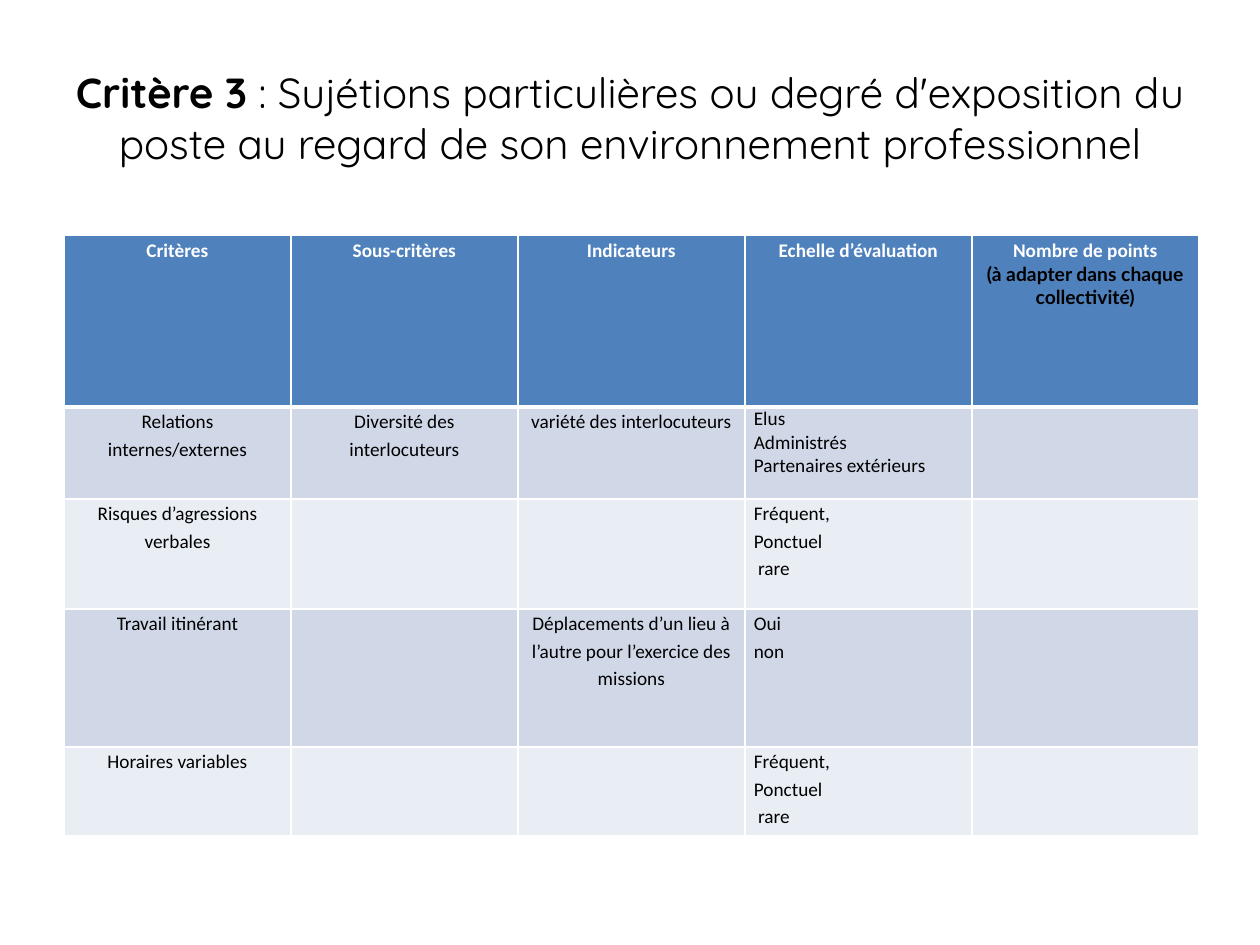
from lxml import etree
from pptx import Presentation, util as u
from pptx.dml.color import RGBColor
from pptx.enum import text
from pptx.oxml.ns import qn

PX = 914400 // 126
COLORS = {"header": "4F81BD", "odd": "D0D8E8", "even": "E9EDF4",
          "white": "FFFFFF", "black": "000000"}

TITLE = [("Critère 3", True),
         (" : Sujétions particulières ou degré d'exposition du poste "
          "au regard de son environnement professionnel", False)]
HEADERS = ["Critères", "Sous-critères", "Indicateurs", "Echelle d’évaluation",
           "Nombre de points"]
HEADER_NOTE = "(à adapter dans chaque collectivité)"
FREQUENCY = ["Fréquent,", "Ponctuel", " rare"]
# criterion, sub-criterion, indicator, scale, line spacing of the scale
CRITERIA = [
    ("Relations internes/externes", "Diversité des interlocuteurs",
     "variété des interlocuteurs", ["Elus", "Administrés", "Partenaires extérieurs"], 1.0),
    ("Risques d’agressions verbales", "", "", FREQUENCY, 1.15),
    ("Travail itinérant", "",
     "Déplacements d’un lieu à l’autre pour l’exercice des missions", ["Oui", "non"], 1.15),
    ("Horaires variables", "", "", FREQUENCY, 1.15),
]
TITLE_BOX = (63, 38, 1134, 158)
TABLE_LEFT, TABLE_TOP = 64, 235
COLUMN_WIDTH = 227
ROW_HEIGHTS = [172, 92, 110, 138, 89]


def px(value):
    return u.Emu(value * PX)


def rgb(name):
    return RGBColor.from_string(COLORS[name])


def add_text(frame, runs, size=11, font="Calibri", color="black", align="CENTER", spacing=1.15):
    """Write (words, bold) runs as one paragraph, reusing an empty first one."""
    para = frame.paragraphs[-1]
    if para.runs:
        para = frame.add_paragraph()
    para.alignment = getattr(text.PP_ALIGN, align)
    para.line_spacing = spacing
    for words, bold in runs:
        span = para.add_run()
        span.text = words
        span.font.size = u.Pt(size)
        span.font.name = font
        span.font.bold = bold
        span.font.color.rgb = rgb(color)


def style_cell(cell, fill, bottom=1):
    cell.margin_left = cell.margin_right = px(9)
    cell.margin_top = cell.margin_bottom = 0
    cell.fill.solid()
    cell.fill.fore_color.rgb = rgb(fill)
    properties = cell._tc.get_or_add_tcPr()
    for index, (side, width) in enumerate(zip("LRTB", (1, 1, 1, bottom))):
        line = etree.Element(qn(f"a:ln{side}"), w=str(u.Pt(width)))
        solid = etree.SubElement(line, qn("a:solidFill"))
        etree.SubElement(solid, qn("a:srgbClr"), val=COLORS["white"])
        properties.insert(index, line)


def add_title(slide):
    frame = slide.shapes.add_textbox(*map(px, TITLE_BOX)).text_frame
    frame.word_wrap = True
    frame.vertical_anchor = text.MSO_ANCHOR.MIDDLE
    frame.margin_left = frame.margin_right = 0
    add_text(frame, TITLE, size=24, font="Quicksand", spacing=1.0)


def add_criteria_table(slide):
    rows, columns = len(ROW_HEIGHTS), len(HEADERS)
    table = slide.shapes.add_table(
        rows, columns, px(TABLE_LEFT), px(TABLE_TOP),
        px(COLUMN_WIDTH * columns), px(sum(ROW_HEIGHTS))).table
    for column in table.columns:
        column.width = px(COLUMN_WIDTH)
    for row, height in zip(table.rows, ROW_HEIGHTS):
        row.height = px(height)

    for index, header in enumerate(HEADERS):
        cell = table.cell(0, index)
        style_cell(cell, "header", bottom=3)
        add_text(cell.text_frame, [(header, True)], color="white")
    add_text(table.cell(0, columns - 1).text_frame, [(HEADER_NOTE, True)],
             font="Lato", spacing=1.0)

    for number, (*labels, scale, spacing) in enumerate(CRITERIA, start=1):
        for index in range(columns):
            style_cell(table.cell(number, index), "odd" if number % 2 else "even",)
        for index, label in enumerate(labels):
            if label:
                add_text(table.cell(number, index).text_frame, [(label, False)])
        for level in scale:
            add_text(table.cell(number, len(labels)).text_frame, [(level, False)],
                     align="LEFT", spacing=spacing)


def main():
    deck = Presentation()
    deck.slide_width, deck.slide_height = px(1260), px(945)
    slide = deck.slides.add_slide(deck.slide_layouts[6])
    add_title(slide)
    add_criteria_table(slide)
    deck.save("out.pptx")


if __name__ == "__main__":
    main()
